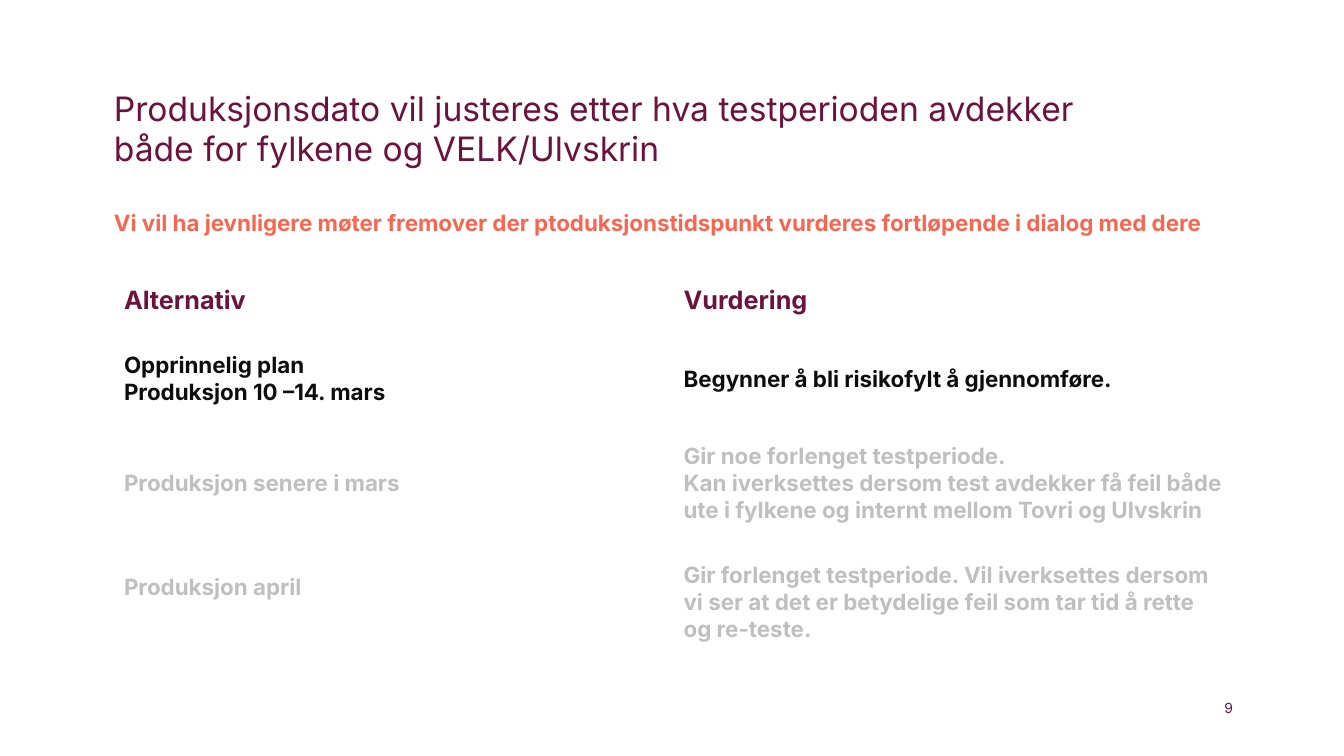
from dataclasses import dataclass

from pptx import Presentation
from pptx.dml.color import RGBColor
from pptx.enum import text
from pptx.util import Inches, Pt


@dataclass(frozen=True)
class Theme:
    font: str = "Inter"
    plum: str = "6B133D"
    coral: str = "F76650"
    ink: str = "0D0D0D"
    muted: str = "BFBFBF"
    title: int = 24
    heading: int = 18
    body: int = 16
    number: int = 10


@dataclass(frozen=True)
class Option:
    alternative: str
    assessment: str
    height: float
    color: str
    size: int = 16
    lift: float = 0  # extra bottom margin under the alternative


THEME = Theme()
LEFT, WIDTH = 1.13, 11.1

HEADLINE = ("Produksjonsdato vil justeres etter hva testperioden avdekker\v"
            "både for fylkene og VELK/Ulvskrin")
MESSAGE = ("Vi vil ha jevnligere møter fremover der ptoduksjonstidspunkt "
           "vurderes fortløpende i dialog med dere")
OPTIONS = [
    Option("Alternativ", "Vurdering", 0.4, THEME.plum, THEME.heading),
    Option("Opprinnelig plan\nProduksjon 10 –14. mars",
           "Begynner å bli risikofylt å gjennomføre.", 1.16, THEME.ink),
    Option("Produksjon senere i mars",
           "Gir noe forlenget testperiode.\vKan iverksettes dersom test avdekker "
           "få feil både ute i fylkene og internt mellom Tovri og Ulvskrin",
           0.91, THEME.muted),
    Option("Produksjon april",
           "Gir forlenget testperiode. Vil iverksettes dersom vi ser at det er "
           "betydelige feil som tar tid å rette og re-teste.",
           1.44, THEME.muted, lift=0.28),
]


def style_paragraph(paragraph, size: int, color: str, bold: bool = False) -> None:
    for run in paragraph.runs:
        for name, value in {"name": THEME.font, "size": Pt(size), "bold": bold}.items():
            setattr(run.font, name, value)
        run.font.color.rgb = RGBColor.from_string(color)


def prepare_frame(frame) -> None:
    """Make a text frame wrap, start at the top and have no margins."""
    settings = {"margin_left": 0, "margin_right": 0, "margin_top": 0,
                "margin_bottom": 0, "word_wrap": True,
                "vertical_anchor": text.MSO_ANCHOR.TOP,
                "auto_size": text.MSO_AUTO_SIZE.NONE}
    for name, value in settings.items():
        setattr(frame, name, value)


def add_title(slide) -> None:
    title = slide.shapes.title
    place = {"left": LEFT, "top": 0.87, "width": WIDTH, "height": 0.96}
    for name, value in place.items():
        setattr(title, name, Inches(value))
    prepare_frame(title.text_frame)
    headline = title.text_frame.paragraphs[0]
    message = title.text_frame.add_paragraph()
    headline.text, message.text = HEADLINE, MESSAGE
    message.space_before = Pt(29)
    style_paragraph(headline, THEME.title, THEME.plum)
    style_paragraph(message, THEME.body, THEME.coral, bold=True)
    for paragraph in (headline, message):
        paragraph.alignment = text.PP_ALIGN.LEFT


def add_options(slide, options: list[Option]) -> None:
    height = sum(option.height for option in options)
    table = slide.shapes.add_table(len(options), 2, Inches(LEFT), Inches(2.78),
                                   Inches(WIDTH), Inches(height)).table
    table.first_row = table.horz_banding = False
    for row, option in zip(table.rows, options):
        row.height = Inches(option.height)
        for cell, words in zip(row.cells, (option.alternative, option.assessment)):
            cell.text = words
            cell.fill.background()
            cell.vertical_anchor = text.MSO_ANCHOR.MIDDLE
            for paragraph in cell.text_frame.paragraphs:
                style_paragraph(paragraph, option.size, option.color, bold=True)
        row.cells[0].margin_bottom = Inches(0.05 + option.lift)


def add_page_number(slide, number: int) -> None:
    frame = slide.shapes.add_textbox(Inches(11.8), Inches(6.94),
                                     Inches(0.43), Inches(0.17)).text_frame
    prepare_frame(frame)
    frame.text = str(number)
    frame.paragraphs[0].alignment = text.PP_ALIGN.RIGHT
    style_paragraph(frame.paragraphs[0], THEME.number, THEME.plum)


def main() -> None:
    deck = Presentation()
    deck.slide_width, deck.slide_height = Inches(13.33), Inches(7.5)
    slide = deck.slides.add_slide(deck.slide_layouts.get_by_name("Title Only"))
    add_options(slide, OPTIONS)
    add_page_number(slide, 9)
    add_title(slide)
    deck.save("out.pptx")


if __name__ == "__main__":
    main()
